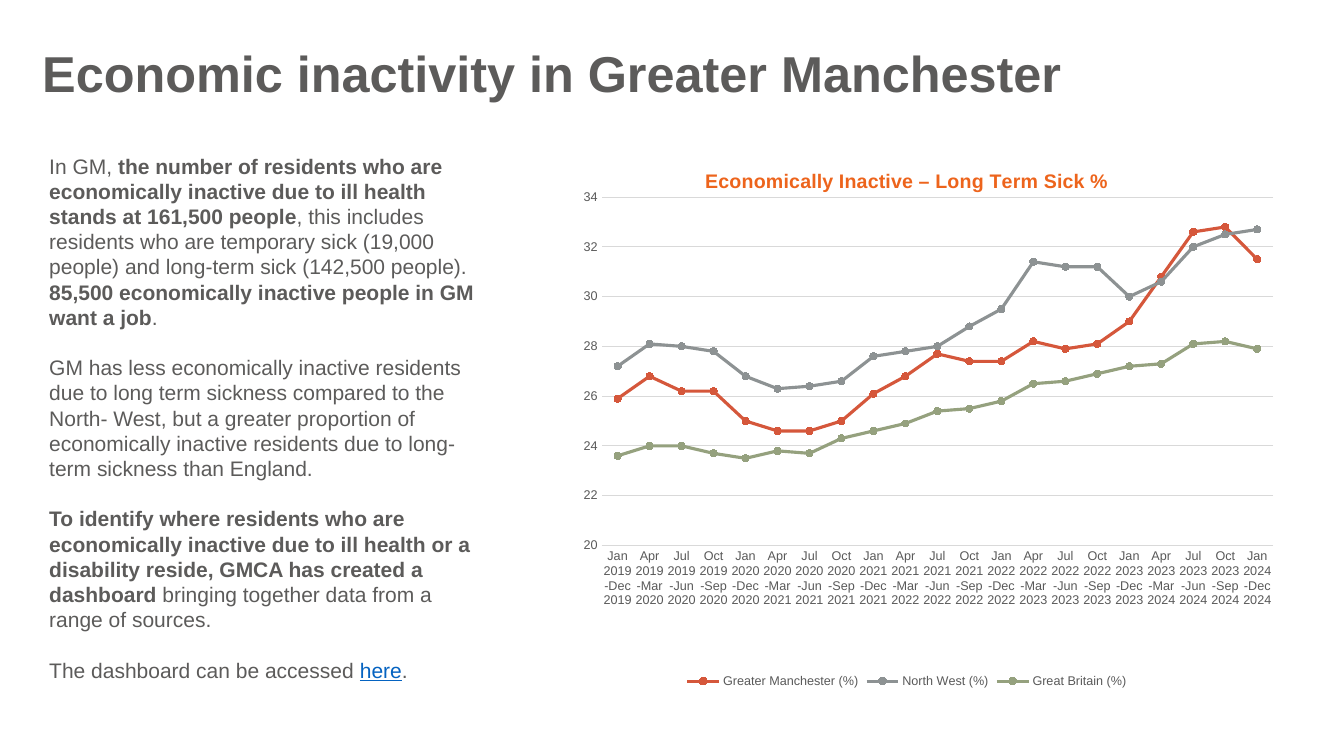
from lxml import etree
from pptx import Presentation
from pptx.chart.data import CategoryChartData
from pptx.dml.color import RGBColor
from pptx.enum.chart import XL_CHART_TYPE, XL_LEGEND_POSITION, XL_MARKER_STYLE, XL_TICK_MARK
from pptx.enum.text import MSO_ANCHOR
from pptx.oxml.ns import qn
from pptx.util import Inches, Pt

LINE_MARKERS = XL_CHART_TYPE.LINE_MARKERS
LEGEND_BOTTOM = XL_LEGEND_POSITION.BOTTOM
CIRCLE = XL_MARKER_STYLE.CIRCLE
NO_TICK = XL_TICK_MARK.NONE
MIDDLE = MSO_ANCHOR.MIDDLE

FONT = "Arial"
TEXT_GREY, AXIS_GREY, GRID_GREY = "5C5B5A", "595959", "D9D9D9"
TITLE_ORANGE, LINK_BLUE = "ED641C", "0563C1"

# Each run is its text followed by its format values
BOLD = {"bold": True}
LINK = {"underline": True, "color": LINK_BLUE}
BODY = [
    [("In GM, ", {}),
     ("the number of residents who are economically inactive due to ill health "
      "stands at 161,500 people", BOLD),
     (", this includes residents who are temporary sick (19,000 people) and "
      "long-term sick (142,500 people). ", {}),
     ("85,500 economically inactive people in GM want a job", BOLD),
     (".", {})],
    [("GM has less economically inactive residents due to long term sickness compared "
      "to the North- West, but a greater proportion of economically inactive residents "
      "due to long-term sickness than England.", {})],
    [("To identify where residents who are economically inactive due to ill health or a "
      "disability reside, GMCA has created a dashboard", BOLD),
     (" bringing together data from a range of sources.", {})],
    [("The dashboard can be accessed ", {}), ("here", LINK), (".", {})],
]

# Rolling twelve-month periods, one starting each quarter
QUARTERS = [("Jan", "Dec", 0), ("Apr", "Mar", 1), ("Jul", "Jun", 1), ("Oct", "Sep", 1)]
PERIODS = [f"{start} {year}-{end} {year + shift}"
           for year in range(2019, 2025) for start, end, shift in QUARTERS][:21]
SERIES = [
    ("Greater Manchester (%)", "D5573B",
     [25.9, 26.8, 26.2, 26.2, 25, 24.6, 24.6, 25, 26.1, 26.8, 27.7,
      27.4, 27.4, 28.2, 27.9, 28.1, 29, 30.8, 32.6, 32.8, 31.5]),
    ("North West (%)", "8D9293",
     [27.2, 28.1, 28, 27.8, 26.8, 26.3, 26.4, 26.6, 27.6, 27.8, 28,
      28.8, 29.5, 31.4, 31.2, 31.2, 30, 30.6, 32, 32.5, 32.7]),
    ("Great Britain (%)", "95A17E",
     [23.6, 24, 24, 23.7, 23.5, 23.8, 23.7, 24.3, 24.6, 24.9, 25.4,
      25.5, 25.8, 26.5, 26.6, 26.9, 27.2, 27.3, 28.1, 28.2, 27.9]),
]


def rgb(color):
    return RGBColor.from_string(color)


def format_font(font, size, color=TEXT_GREY, **values):
    font.color.rgb = rgb(color)
    for name, value in {"name": FONT, "size": Pt(size), **values}.items():
        setattr(font, name, value)


def format_line(line, color, width):
    line.color.rgb = rgb(color)
    line.width = Pt(width)


def add_text(slide, box, paragraphs, size, spacing, anchor=None):
    """Add a wrapped text box; spacing holds paragraph format values."""
    frame = slide.shapes.add_textbox(*map(Inches, box)).text_frame
    frame.word_wrap = True
    frame.vertical_anchor = anchor
    for index, runs in enumerate(paragraphs):
        paragraph = frame.add_paragraph() if index else frame.paragraphs[0]
        for name, value in spacing.items():
            setattr(paragraph, name, value)
        if index == len(paragraphs) - 1 and index:
            paragraph.space_after = Pt(0)
        for text, values in runs:
            run = paragraph.add_run()
            run.text = text
            format_font(run.font, size, **values)


def set_plot_layout(chart, **fractions):
    """Fix the inner plot area as fractions of the chart."""
    plot_area = chart._chartSpace.chart.plotArea
    for old in plot_area.findall(qn("c:layout")):
        plot_area.remove(old)
    layout = etree.Element(qn("c:layout"))
    plot_area.insert(0, layout)
    manual = etree.SubElement(layout, qn("c:manualLayout"))
    settings = {"layoutTarget": "inner", "xMode": "edge", "yMode": "edge", **fractions}
    for name, value in settings.items():
        etree.SubElement(manual, qn(f"c:{name}")).set("val", str(value))


def format_axes(chart):
    for axis in (chart.category_axis, chart.value_axis):
        axis.major_tick_mark = axis.minor_tick_mark = NO_TICK
        format_font(axis.tick_labels.font, 9, AXIS_GREY)
    format_line(chart.category_axis.format.line, GRID_GREY, 0.75)
    value_axis = chart.value_axis
    value_axis.minimum_scale = 20
    value_axis.format.line.fill.background()
    format_line(value_axis.major_gridlines.format.line, GRID_GREY, 0.75)
    value_axis.tick_labels.number_format = "#,##0"
    value_axis.tick_labels.number_format_is_linked = False


def add_line_chart(slide, box, title):
    data = CategoryChartData()
    data.categories = PERIODS
    for name, _, values in SERIES:
        data.add_series(name, values)
    chart = slide.shapes.add_chart(LINE_MARKERS, *map(Inches, box), data).chart
    format_font(chart.font, 10, "000000")

    # Title and legend
    chart.has_title = True
    chart.chart_title.text_frame.text = title
    title_run = chart.chart_title.text_frame.paragraphs[0].runs[0]
    format_font(title_run.font, 14, TITLE_ORANGE, bold=True)
    chart.has_legend = True
    chart.legend.position = LEGEND_BOTTOM
    chart.legend.include_in_layout = False
    format_font(chart.legend.font, 9, AXIS_GREY)

    # Axes, plot area and series
    format_axes(chart)
    set_plot_layout(chart, x=0.1, y=0.09, w=0.88, h=0.64)
    chart.plots[0].vary_by_categories = False
    for series, (_, color, _) in zip(chart.plots[0].series, SERIES):
        series.smooth = False
        format_line(series.format.line, color, 2.25)
        series.marker.style = CIRCLE
        series.marker.size = 5
        series.marker.format.fill.solid()
        series.marker.format.fill.fore_color.rgb = rgb(color)
        format_line(series.marker.format.line, color, 0.75)


def main():
    presentation = Presentation()
    presentation.slide_width = Inches(13.33)
    presentation.slide_height = Inches(7.5)
    slide = presentation.slides.add_slide(presentation.slide_layouts[6])

    # Heading
    heading = [[("Economic inactivity in Greater Manchester", BOLD)]]
    add_text(slide, (0.32, 0.46, 13.01, 0.63), heading, 36,
             {"line_spacing": 0.8, "space_after": Pt(6)}, MIDDLE)

    # Commentary on the left, chart on the right
    add_text(slide, (0.39, 1.47, 4.57, 5.4), BODY, 15, {"space_after": Pt(18)})
    add_line_chart(slide, (5.21, 1.47, 7.57, 5.4),
                   "Economically Inactive – Long Term Sick %")

    presentation.save("out.pptx")


if __name__ == "__main__":
    main()
